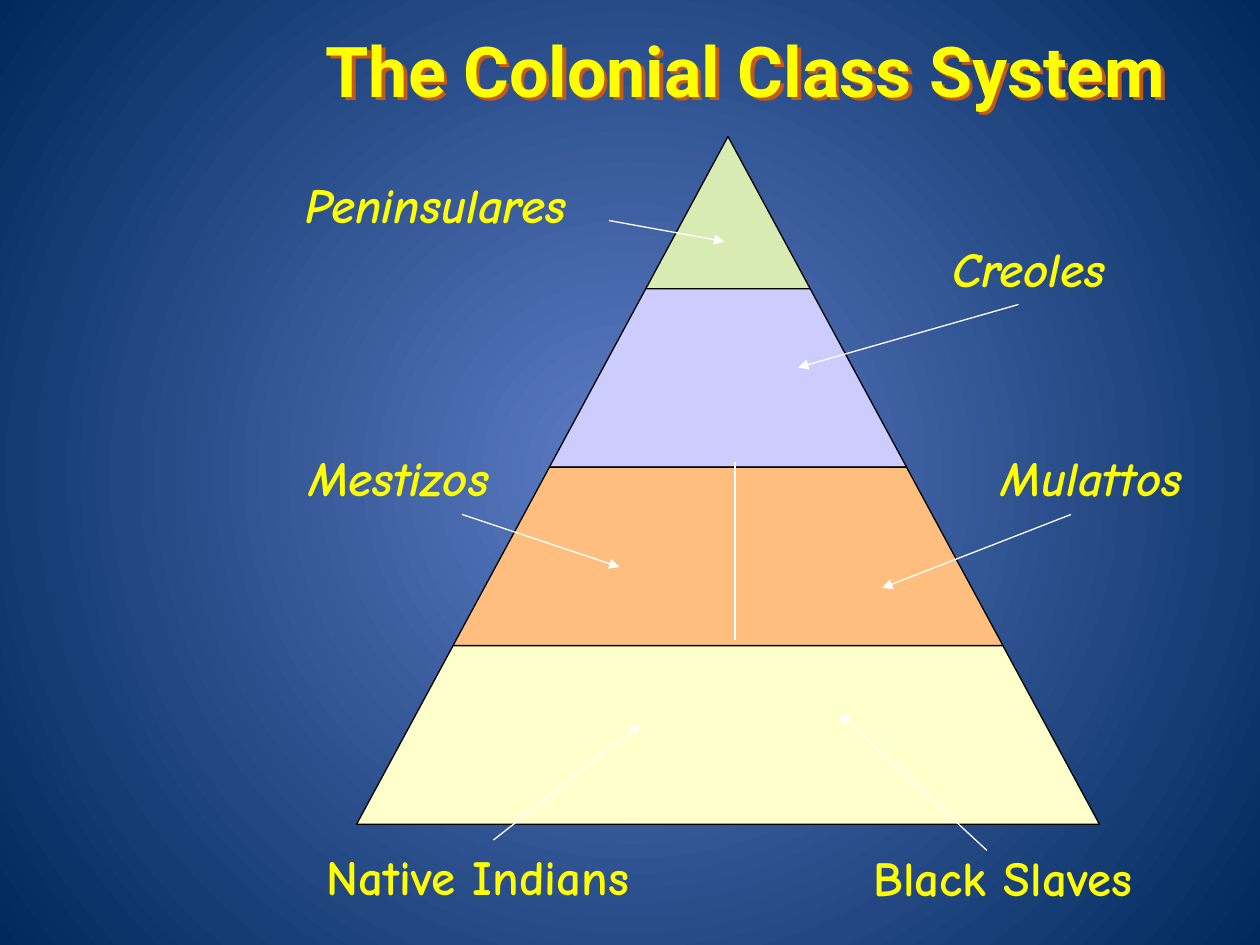
"""Build the colonial class system pyramid slide."""
from dataclasses import dataclass
from itertools import pairwise
from typing import Optional

from lxml.etree import SubElement
from pptx import Presentation
from pptx.dml.color import RGBColor as Rgb
from pptx.enum.shapes import MSO_CONNECTOR as Connector
from pptx.enum.text import MSO_ANCHOR as Anchor, PP_ALIGN as Align
from pptx.oxml.ns import qn
from pptx.util import Pt

COLORS = {
    "glow": "5E7CC5", "edge": "00295C", "text": "FFFF00", "shadow": "C55A11",
    "arrow": "FFFFFF", "outline": "000000", "peninsulares": "D8EBB3",
    "creoles": "CCCCFF", "mixed": "FFBE7D", "enslaved": "FFFFCC",
}
TITLE_FONT = {"name": "Roboto", "size": Pt(40), "bold": True, "italic": False}
LABEL_FONT = {"name": "Comic Neue", "size": Pt(28), "bold": True}
FRAME_FORMAT = {"word_wrap": True, "vertical_anchor": Anchor.TOP}
APEX_X, SLOPE = 416, 0.54
LEVELS = (78, 165, 267, 369, 471)
BANDS = ("peninsulares", "creoles", "mixed", "enslaved")
LABEL_HEIGHT = 41


@dataclass(frozen=True)
class ClassLabel:
    text: str
    left: float
    top: float
    width: float
    start: tuple[float, float]
    end: tuple[float, float]
    italic: bool = True


LABELS = (
    ClassLabel("Peninsulares", 150, 96, 198, (348, 126), (414, 138)),
    ClassLabel("Creoles", 516, 133, 144, (582, 174), (456, 210)),
    ClassLabel("Mestizos", 156, 252, 144, (264, 294), (354, 324)),
    ClassLabel("Mulattos", 558, 252, 132, (612, 294), (504, 336)),
    ClassLabel("Native Indians", 150, 480, 246, (282, 480), (366, 414), False),
    ClassLabel("Black Slaves", 462, 481, 222, (564, 486), (480, 408), False),
)


def rgb(part: str) -> Rgb:
    return Rgb.from_string(COLORS[part])


def apply(target, values: dict) -> None:
    for attribute, value in values.items():
        setattr(target, attribute, value)


def write(frame, text: str, font_format: dict) -> None:
    apply(frame, FRAME_FORMAT)
    paragraph = frame.paragraphs[0]
    paragraph.alignment = Align.CENTER
    run = paragraph.add_run()
    run.text = text
    apply(run.font, font_format)
    run.font.color.rgb = rgb("text")


def paint_background(slide) -> None:
    fill = slide.background.fill
    fill.gradient()
    for stop, part in zip(fill.gradient_stops, ("glow", "edge")):
        stop.color.rgb = rgb(part)
    gradient = slide.element.find(".//" + qn("a:gradFill"))
    gradient.remove(gradient.find(qn("a:lin")))
    circle = SubElement(gradient, qn("a:path"), path="circle")
    SubElement(circle, qn("a:fillToRect"),
               dict.fromkeys("ltrb", "50000"))


def add_title(slide, text: str) -> None:
    title = slide.shapes.title
    apply(title, {"left": Pt(156), "top": Pt(12), "width": Pt(540), "height": Pt(55)})
    write(title.text_frame, text, TITLE_FONT)
    effects = SubElement(title.element.spPr, qn("a:effectLst"))
    shadow = SubElement(effects, qn("a:outerShdw"), dist=str(Pt(2.8)),
                        dir="2700000", algn="ctr", rotWithShape="0")
    SubElement(shadow, qn("a:srgbClr"), val=COLORS["shadow"])


def add_band(slide, part: str, top: float, bottom: float) -> None:
    upper, lower = (SLOPE * (level - LEVELS[0]) for level in (top, bottom))
    corners = ((APEX_X - upper, top), (APEX_X + upper, top),
               (APEX_X + lower, bottom), (APEX_X - lower, bottom))
    first, *others = [(Pt(x), Pt(y)) for x, y in dict.fromkeys(corners)]
    builder = slide.shapes.build_freeform(*first)
    builder.add_line_segments(others, close=True)
    band = builder.convert_to_shape()
    band.shadow.inherit = False
    band.fill.solid()
    band.fill.fore_color.rgb = rgb(part)
    band.line.color.rgb = rgb("outline")
    band.line.width = Pt(0.75)


def add_line(slide, start: tuple[float, float], end: tuple[float, float],
             head: Optional[str] = None) -> None:
    line = slide.shapes.add_connector(
        Connector.STRAIGHT, *(Pt(value) for value in (*start, *end)))
    line.line.color.rgb = rgb("arrow")
    line.line.width = Pt(0.75)
    properties = line.element.spPr
    if head:
        SubElement(properties.find(qn("a:ln")), qn("a:tailEnd"), type=head)
    SubElement(properties, qn("a:effectLst"))


def add_label(slide, label: ClassLabel) -> None:
    box = slide.shapes.add_textbox(
        Pt(label.left), Pt(label.top), Pt(label.width), Pt(LABEL_HEIGHT))
    write(box.text_frame, label.text, LABEL_FONT | {"italic": label.italic})
    add_line(slide, label.start, label.end, "triangle")


def main() -> None:
    deck = Presentation()
    apply(deck, {"slide_width": Pt(720), "slide_height": Pt(540)})
    slide = deck.slides.add_slide(deck.slide_layouts[5])
    paint_background(slide)
    add_title(slide, "The Colonial Class System")
    for part, (top, bottom) in zip(BANDS, pairwise(LEVELS)):
        add_band(slide, part, top, bottom)
    add_line(slide, (420, 264), (420, 366))
    for label in LABELS:
        add_label(slide, label)
    deck.save("out.pptx")


if __name__ == "__main__":
    main()
